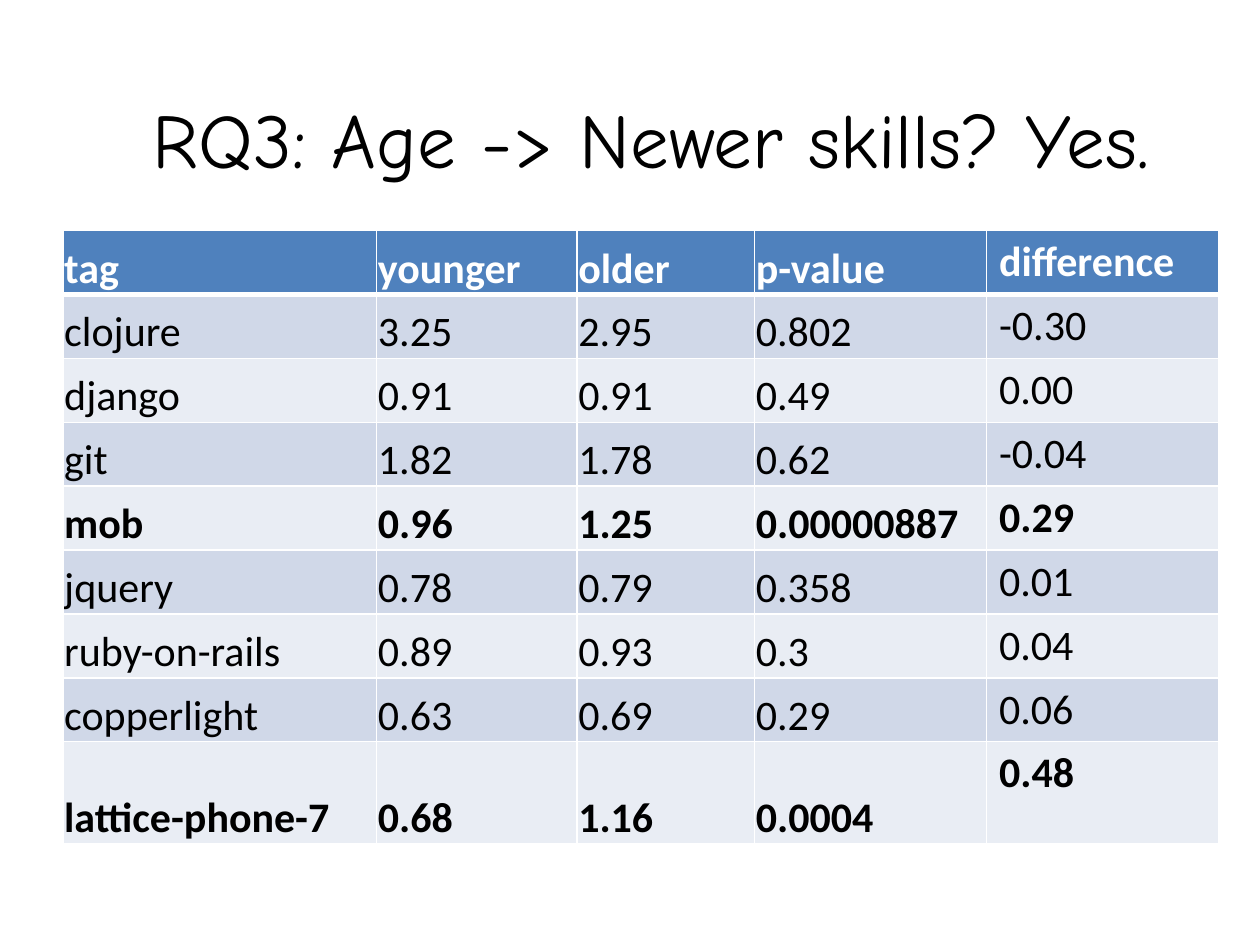
import pptx
import pptx.dml.color
import pptx.enum.text
import pptx.oxml
import pptx.oxml.ns
import pptx.util

WIDTH, HEIGHT = 10, 7.5
COLUMN_WIDTHS = [2.49, 1.59, 1.41, 1.84, 1.84]
ROW_HEIGHT, LAST_ROW_HEIGHT = 0.5, 0.81
HEADER_FILL, BAND_FILLS = "4F81BD", ["D0D8E8", "E9EDF4"]
ANCHOR = pptx.enum.text.MSO_ANCHOR

HEADINGS = ["tag", "younger", "older", "p-value", "difference"]
SKILLS = [
    ["clojure", "3.25", "2.95", "0.802", "-0.30"],
    ["django", "0.91", "0.91", "0.49", "0.00"],
    ["git", "1.82", "1.78", "0.62", "-0.04"],
    ["mob", "0.96", "1.25", "0.00000887", "0.29"],
    ["jquery", "0.78", "0.79", "0.358", "0.01"],
    ["ruby-on-rails", "0.89", "0.93", "0.3", "0.04"],
    ["copperlight", "0.63", "0.69", "0.29", "0.06"],
    ["lattice-phone-7", "0.68", "1.16", "0.0004", "0.48"],
]
SIGNIFICANT = {"mob", "lattice-phone-7"}


def inches(length):
    return pptx.util.Inches(length)


def color(hex_code):
    return pptx.dml.color.RGBColor.from_string(hex_code)


def write(frame, text, size=24, font="Calibri", ink="000000", bold=False, align=None):
    paragraph = frame.paragraphs[0]
    paragraph.alignment = align
    run = paragraph.add_run()
    run.text = text
    run.font.size = pptx.util.Pt(size)
    run.font.name = font
    run.font.bold = bold
    run.font.color.rgb = color(ink)


def add_borders(cell, bottom=1):
    """Draw white cell borders; they must come before the fill in the XML."""
    properties = cell._tc.get_or_add_tcPr()
    namespace = pptx.oxml.ns.nsdecls("a")
    for place, (side, points) in enumerate(
        [("L", 1), ("R", 1), ("T", 1), ("B", bottom)]
    ):
        properties.insert(place, pptx.oxml.parse_xml(
            f'<a:ln{side} {namespace} w="{pptx.util.Pt(points)}"><a:solidFill>'
            f'<a:srgbClr val="FFFFFF"/></a:solidFill></a:ln{side}>'))


def add_title(slide, text):
    title = slide.shapes.title
    title.left, title.top = inches(0.67), inches(0.47)
    title.width, title.height = inches(0.9 * WIDTH), inches(HEIGHT / 6)
    title.text_frame.word_wrap = True
    title.text_frame.vertical_anchor = ANCHOR.MIDDLE
    write(title.text_frame, text, size=44, font="Comic Neue",
          align=pptx.enum.text.PP_ALIGN.CENTER)


def fill_cell(cell, text, fill, tight, header_below=1, **text_format):
    cell.fill.solid()
    cell.fill.fore_color.rgb = color(fill)
    add_borders(cell, header_below)
    # All columns but the last sit on the bottom edge with thin margins
    if tight:
        cell.vertical_anchor = ANCHOR.BOTTOM
        cell.margin_left = cell.margin_right = cell.margin_top = inches(0.01)
        cell.margin_bottom = 0
    write(cell.text_frame, text, **text_format)


def add_skill_table(slide):
    rows = [HEADINGS] + SKILLS
    heights = [ROW_HEIGHT] * len(SKILLS) + [LAST_ROW_HEIGHT]
    table = slide.shapes.add_table(
        len(rows), len(HEADINGS), inches(0.05 * WIDTH), inches(1.83),
        inches(sum(COLUMN_WIDTHS)), inches(sum(heights))).table
    for column, width in zip(table.columns, COLUMN_WIDTHS):
        column.width = inches(width)
    for row, height in zip(table.rows, heights):
        row.height = inches(height)

    for r, values in enumerate(rows):
        for c, value in enumerate(values):
            cell, tight = table.cell(r, c), c < len(HEADINGS) - 1
            if r == 0:
                fill_cell(cell, value, HEADER_FILL, tight, header_below=3,
                          ink="FFFFFF", bold=True)
            else:
                # The rule under the header is shared with the first row
                fill_cell(cell, value, BAND_FILLS[(r - 1) % 2], tight,
                          bold=values[0] in SIGNIFICANT)
                if r == 1:
                    top = cell._tc.tcPr.find(pptx.oxml.ns.qn("a:lnT"))
                    top.set("w", str(pptx.util.Pt(3)))


def main():
    deck = pptx.Presentation()
    deck.slide_width, deck.slide_height = inches(WIDTH), inches(HEIGHT)
    slide = deck.slides.add_slide(deck.slide_layouts.get_by_name("Title Only"))
    add_title(slide, "RQ3: Age -> Newer skills? Yes.")
    add_skill_table(slide)
    deck.save("out.pptx")


if __name__ == "__main__":
    main()
